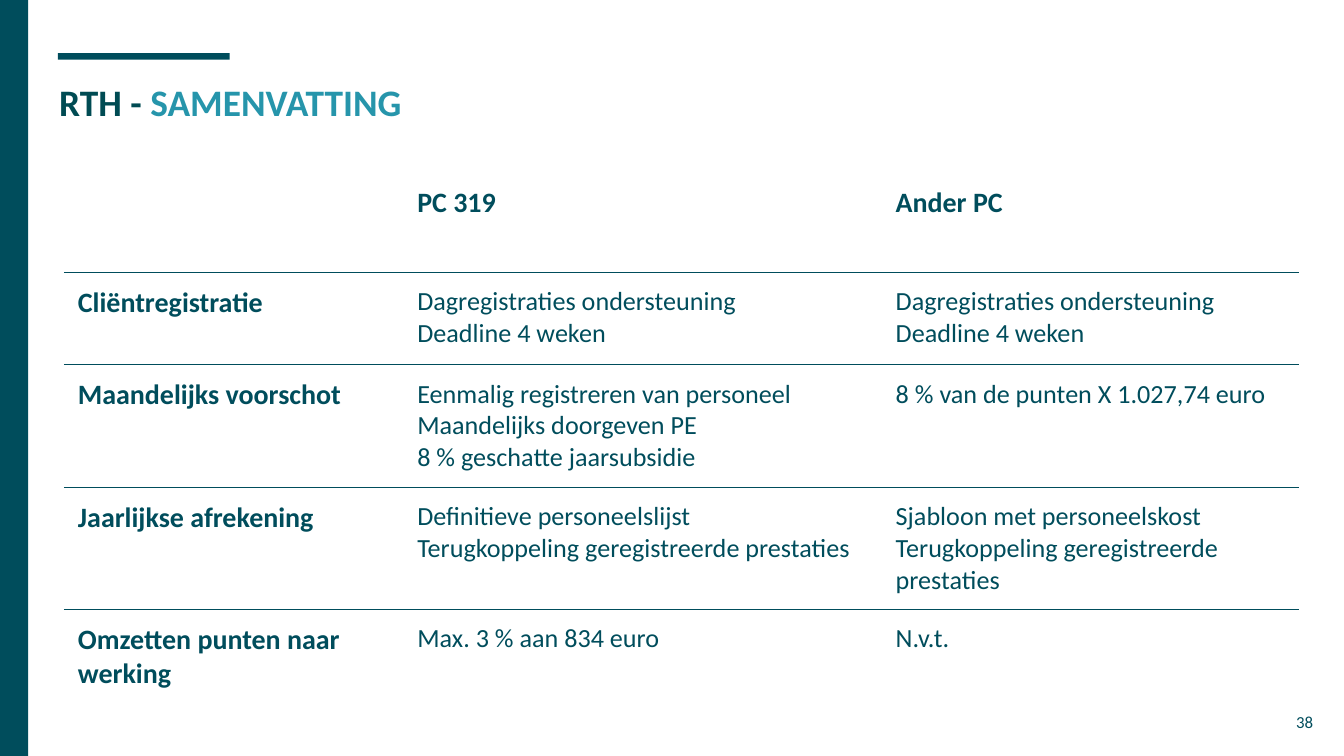
from pptx import Presentation
from pptx.dml.color import RGBColor as RGB
from pptx.enum.shapes import MSO_SHAPE as SHAPE
from pptx.enum.text import MSO_ANCHOR as ANCHOR, MSO_AUTO_SIZE as AUTO, PP_ALIGN as ALIGN
from pptx.oxml import parse_xml
from pptx.oxml.ns import nsdecls
from pptx.util import Emu, Pt
from dataclasses import dataclass


@dataclass(frozen=True)
class Theme:
    font: str = "Calibri"
    dark: str = "004D5C"
    title: str = "004B53"
    accent: str = "2695AB"
    paper: str = "FFFFFF"
    title_size: int = 20
    head_size: int = 15
    body_size: int = 14
    number_size: int = 9
    border: float = 0.75


THEME = Theme()
INSET = 20
HEADER = ["", "PC 319", "Ander PC"]
ROWS = [
    ["Cliëntregistratie",
     "Dagregistraties ondersteuning\nDeadline 4 weken",
     "Dagregistraties ondersteuning\nDeadline 4 weken"],
    ["Maandelijks voorschot",
     "Eenmalig registreren van personeel\nMaandelijks doorgeven PE\n8 % geschatte jaarsubsidie",
     "8 % van de punten X 1.027,74 euro"],
    ["Jaarlijkse afrekening",
     "Definitieve personeelslijst\nTerugkoppeling geregistreerde prestaties",
     "Sjabloon met personeelskost\nTerugkoppeling geregistreerde prestaties"],
    ["Omzetten punten naar werking", "Max. 3 % aan 834 euro", "N.v.t."],
]


def px(n):
    """200 px to the inch."""
    return Emu(n * 4572)


def apply(obj, values):
    for name, value in values.items():
        setattr(obj, name, value)


def insets():
    return {f"margin_{side}": px(INSET) for side in ("left", "top", "right", "bottom")}


def style_font(font, size, color, bold=False):
    apply(font, {"name": THEME.font, "size": Pt(size), "bold": bold})
    font.color.rgb = RGB.from_string(color)


def style_frame(tf):
    apply(tf, {**insets(), "word_wrap": True, "auto_size": AUTO.NONE,
               "vertical_anchor": ANCHOR.TOP})


def add_bar(slide, x, y, w, h):
    sp = slide.shapes.add_shape(SHAPE.RECTANGLE, px(x), px(y), px(w), px(h))
    sp.shadow.inherit = False
    sp.fill.solid()
    sp.fill.fore_color.rgb = RGB.from_string(THEME.dark)
    sp.line.fill.background()


def add_title(slide, x, y, w, h):
    # Accent bar above the two-colour title
    add_bar(slide, x + 18, y - 19, 256, 10)
    sp = slide.shapes.title
    apply(sp, {"left": px(x), "top": px(y), "width": px(w), "height": px(h)})
    style_frame(sp.text_frame)
    p = sp.text_frame.paragraphs[0]
    p.alignment = ALIGN.LEFT
    for text, color in (("RTH - ", THEME.title), ("SAMENVATTING", THEME.accent)):
        r = p.add_run()
        r.text = text
        style_font(r.font, THEME.title_size, color, True)


def add_page_number(slide, x, y, w, h):
    tf = slide.shapes.add_textbox(px(x), px(y), px(w), px(h)).text_frame
    style_frame(tf)
    p = tf.paragraphs[0]
    p.text = "38"
    p.alignment = ALIGN.RIGHT
    style_font(p.runs[0].font, THEME.number_size, THEME.dark)


def set_borders(cell, top, bottom):
    # Border elements come before the fill, in this order
    colors = {"lnL": THEME.paper, "lnR": THEME.paper, "lnT": top, "lnB": bottom}
    props = cell._tc.get_or_add_tcPr()
    for i, (tag, color) in enumerate(colors.items()):
        props.insert(i, parse_xml(
            f'<a:{tag} {nsdecls("a")} w="{Pt(THEME.border)}"><a:solidFill>'
            f'<a:srgbClr val="{color}"/></a:solidFill></a:{tag}>'))


def fill_cell(cell, text, is_head):
    apply(cell, {**insets(), "vertical_anchor": ANCHOR.TOP, "text": text})
    cell.fill.solid()
    cell.fill.fore_color.rgb = RGB.from_string(THEME.paper)
    size = THEME.head_size if is_head else THEME.body_size
    for p in cell.text_frame.paragraphs:
        for r in p.runs:
            style_font(r.font, size, THEME.dark, is_head)


def add_summary(slide, x, y, widths, heights):
    grid = [HEADER] + ROWS
    table = slide.shapes.add_table(len(grid), len(HEADER), px(x), px(y),
                                   px(sum(widths)), px(sum(heights))).table
    apply(table, {"first_row": False, "horz_banding": False})
    for col, w in zip(table.columns, widths):
        col.width = px(w)
    for row, h in zip(table.rows, heights):
        row.height = px(h)
    # Only the lines between rows are dark
    last = len(grid) - 1
    for i, texts in enumerate(grid):
        for j, text in enumerate(texts):
            cell = table.cell(i, j)
            fill_cell(cell, text, i == 0 or j == 0)
            set_borders(cell, THEME.dark if i > 0 else THEME.paper,
                        THEME.dark if i < last else THEME.paper)


def main():
    prs = Presentation()
    width, height = 2000, 1125
    apply(prs, {"slide_width": px(width), "slide_height": px(height)})
    slide = prs.slides.add_slide(prs.slide_layouts[5])
    add_bar(slide, 0, 0, 42, height)
    add_title(slide, 68, 98, 1864, 126)
    add_page_number(slide, 1854, 1039, 120, 86)
    add_summary(slide, 96, 257, [505, 712, 619], [148] + [138] * len(ROWS))
    prs.save("out.pptx")


if __name__ == "__main__":
    main()
